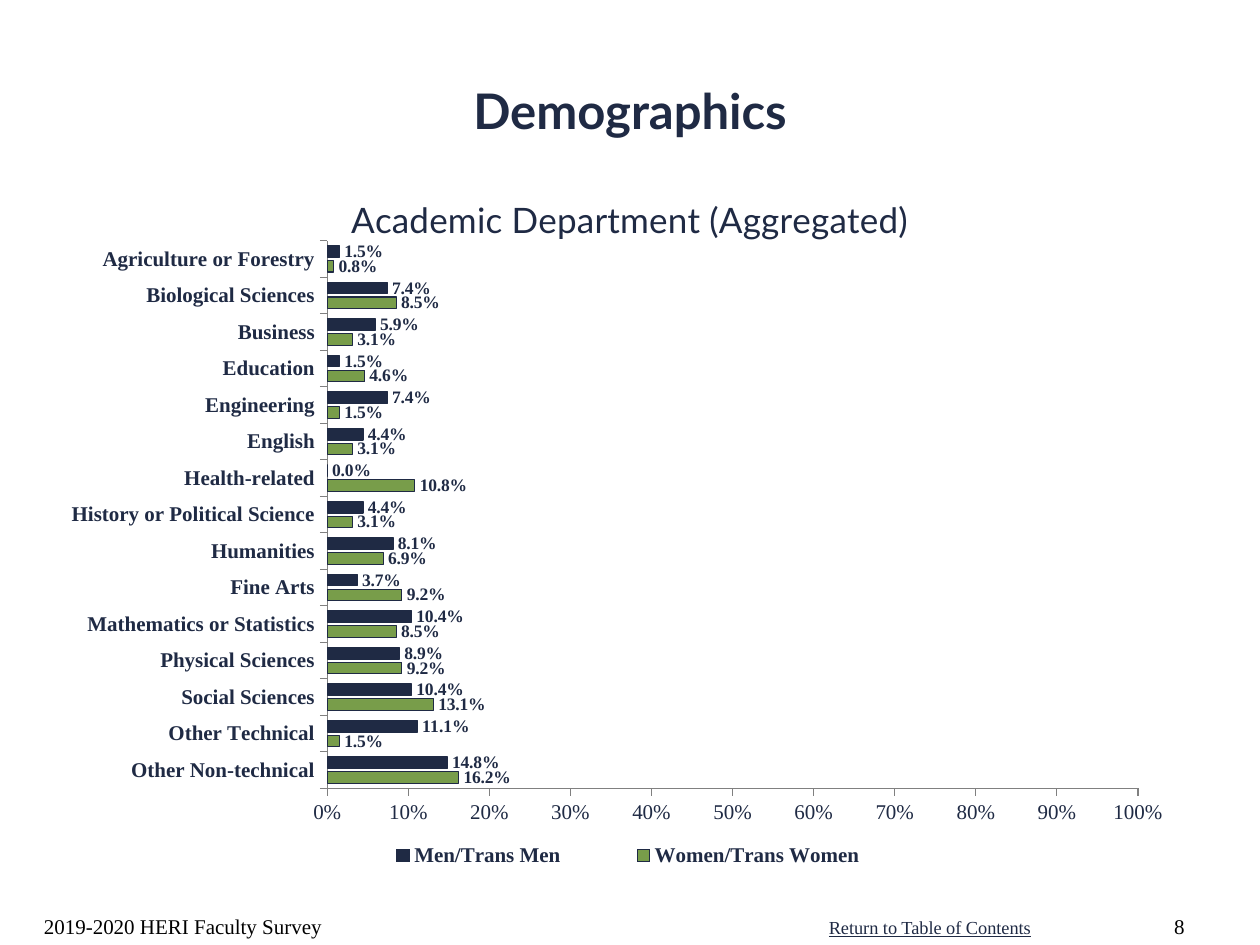
from lxml import etree
from pptx import Presentation
from pptx.chart.data import CategoryChartData
from pptx.dml.color import RGBColor
from pptx.enum.chart import XL_CHART_TYPE as ChartType
from pptx.enum.chart import XL_LABEL_POSITION as LabelPos
from pptx.enum.chart import XL_LEGEND_POSITION as LegendPos
from pptx.enum.chart import XL_TICK_MARK as Tick
from pptx.enum.text import MSO_ANCHOR as Anchor
from pptx.enum.text import MSO_AUTO_SIZE as AutoSize
from pptx.enum.text import PP_ALIGN as Align
from pptx.oxml.ns import qn
from pptx.util import Pt

NAVY = RGBColor(0x1F, 0x2A, 0x44)
GREEN = RGBColor(0x78, 0x9D, 0x4A)
GREY = RGBColor(0x80, 0x80, 0x80)
BLACK = RGBColor(0, 0, 0)
HEAD_FONT, BODY_FONT = "Lato", "Times New Roman"

# Chart box on the slide, and its parts in points from the chart's corner
CHART_BOX = (36, 96, 648, 408)
TITLE_AT = (161, 11)
PLOT_BOX = (151, 41.6, 463.3, 313)
LEGEND_BOX = (151, 382, 344, 22)

# Share of each gender group by department, from the bottom bar up
SERIES = [("Women/Trans Women", GREEN), ("Men/Trans Men", NAVY)]
DEPARTMENTS = [
    ("Other Non-technical", 0.162, 0.148),
    ("Other Technical", 0.015, 0.111),
    ("Social Sciences", 0.131, 0.104),
    ("Physical Sciences", 0.092, 0.089),
    ("Mathematics or Statistics", 0.085, 0.104),
    ("Fine Arts", 0.092, 0.037),
    ("Humanities", 0.069, 0.081),
    ("History or Political Science", 0.031, 0.044),
    ("Health-related", 0.108, 0),
    ("English", 0.031, 0.044),
    ("Engineering", 0.015, 0.074),
    ("Education", 0.046, 0.015),
    ("Business", 0.031, 0.059),
    ("Biological Sciences", 0.085, 0.074),
    ("Agriculture or Forestry", 0.008, 0.015),
]


def set_all(obj, **values):
    for name, value in values.items():
        setattr(obj, name, value)


def style(font, color=NAVY, **values):
    set_all(font, **values)
    font.color.rgb = color


def add_title(slide, text):
    sp = slide.shapes.title
    set_all(sp, left=Pt(0), top=Pt(18), width=Pt(720), height=Pt(90))
    tf = sp.text_frame
    tf.text = text
    tf.vertical_anchor = Anchor.MIDDLE
    p = tf.paragraphs[0]
    p.alignment = Align.CENTER
    style(p.runs[0].font, name=HEAD_FONT, size=Pt(28), bold=True)


def add_text(slide, text, box, align=Align.LEFT, frame=None, **font):
    sp = slide.shapes.add_textbox(*(Pt(v) for v in box))
    tf = sp.text_frame
    set_all(tf, **(frame or {"word_wrap": True, "vertical_anchor": Anchor.BOTTOM}))
    p = tf.paragraphs[0]
    p.alignment = align
    r = p.add_run()
    r.text = text
    style(r.font, **{"name": BODY_FONT, "size": Pt(12), **font})


def set_layout(parent, box, after=None, inner=False):
    """Place a chart part; the file wants fractions of the chart's size."""
    for old in parent.findall(qn("c:layout")):
        parent.remove(old)
    layout = etree.Element(qn("c:layout"))
    manual = etree.SubElement(layout, qn("c:manualLayout"))
    items = {"layoutTarget": "inner"} if inner else {}
    items.update(xMode="edge", yMode="edge")
    width, height = CHART_BOX[2:]
    for key, value, whole in zip("xywh", box, (width, height) * 2):
        items[key] = value / whole
    for tag, value in items.items():
        etree.SubElement(manual, qn(f"c:{tag}")).set("val", str(value))
    if after is None:
        parent.insert(0, layout)
    else:
        parent.find(qn(after)).addnext(layout)


def format_axes(chart):
    cat, val = chart.category_axis, chart.value_axis
    for axis in (cat, val):
        set_all(axis, has_major_gridlines=False, major_tick_mark=Tick.OUTSIDE,
                minor_tick_mark=Tick.NONE)
        axis.format.line.color.rgb = GREY
        axis.format.line.width = Pt(0.75)
        style(axis.tick_labels.font, name=BODY_FONT, size=Pt(12), bold=axis is cat)
    set_all(val, minimum_scale=0, maximum_scale=1, major_unit=0.1)
    set_all(val.tick_labels, number_format="0%", number_format_is_linked=False)


def format_bars(plot):
    set_all(plot, gap_width=88, overlap=-29, vary_by_categories=False)
    for s, (_, color) in zip(plot.series, SERIES):
        s.invert_if_negative = False
        s.format.fill.solid()
        s.format.fill.fore_color.rgb = color
        s.format.line.color.rgb = NAVY
        s.format.line.width = Pt(0.75)
        labels = s.data_labels
        set_all(labels, show_value=True, position=LabelPos.OUTSIDE_END,
                number_format="0.0%", number_format_is_linked=False)
        style(labels.font, name=BODY_FONT, size=Pt(10), bold=True)


def add_bar_chart(slide, title):
    data = CategoryChartData(number_format="0.0%")
    names, *columns = zip(*DEPARTMENTS)
    data.categories = names
    for (name, _), values in zip(SERIES, columns):
        data.add_series(name, values)
    chart = slide.shapes.add_chart(
        ChartType.BAR_CLUSTERED, *(Pt(v) for v in CHART_BOX), data).chart
    style(chart.font, name=BODY_FONT, size=Pt(12))

    # Chart title
    tf = chart.chart_title.text_frame
    tf.text = title
    style(tf.paragraphs[0].runs[0].font,
          name=HEAD_FONT, size=Pt(20), bold=False)
    set_layout(chart.chart_title._element, TITLE_AT, after="c:tx")

    format_axes(chart)
    format_bars(chart.plots[0])
    set_layout(chart._chartSpace.chart.plotArea, PLOT_BOX, inner=True)

    # Legend
    chart.has_legend = True
    legend = chart.legend
    set_all(legend, position=LegendPos.BOTTOM, include_in_layout=False)
    style(legend.font, name=BODY_FONT, size=Pt(12), bold=True)
    set_layout(legend._element, LEGEND_BOX, after="c:legendPos")


def main():
    prs = Presentation()
    set_all(prs, slide_width=Pt(720), slide_height=Pt(540))
    slide = prs.slides.add_slide(prs.slide_layouts[5])

    add_title(slide, "Demographics")
    add_bar_chart(slide, "Academic Department (Aggregated)")

    # Footer
    add_text(slide, "2019-2020 HERI Faculty Survey", (18, 504, 228, 36), color=BLACK)
    add_text(slide, "Return to Table of Contents", (466.5, 520, 131, 20),
             frame={"word_wrap": False, "auto_size": AutoSize.SHAPE_TO_FIT_TEXT},
             size=Pt(10.5), underline=True)
    add_text(slide, "8", (648, 504, 36, 36), Align.RIGHT, color=BLACK)

    prs.save("out.pptx")


if __name__ == "__main__":
    main()
